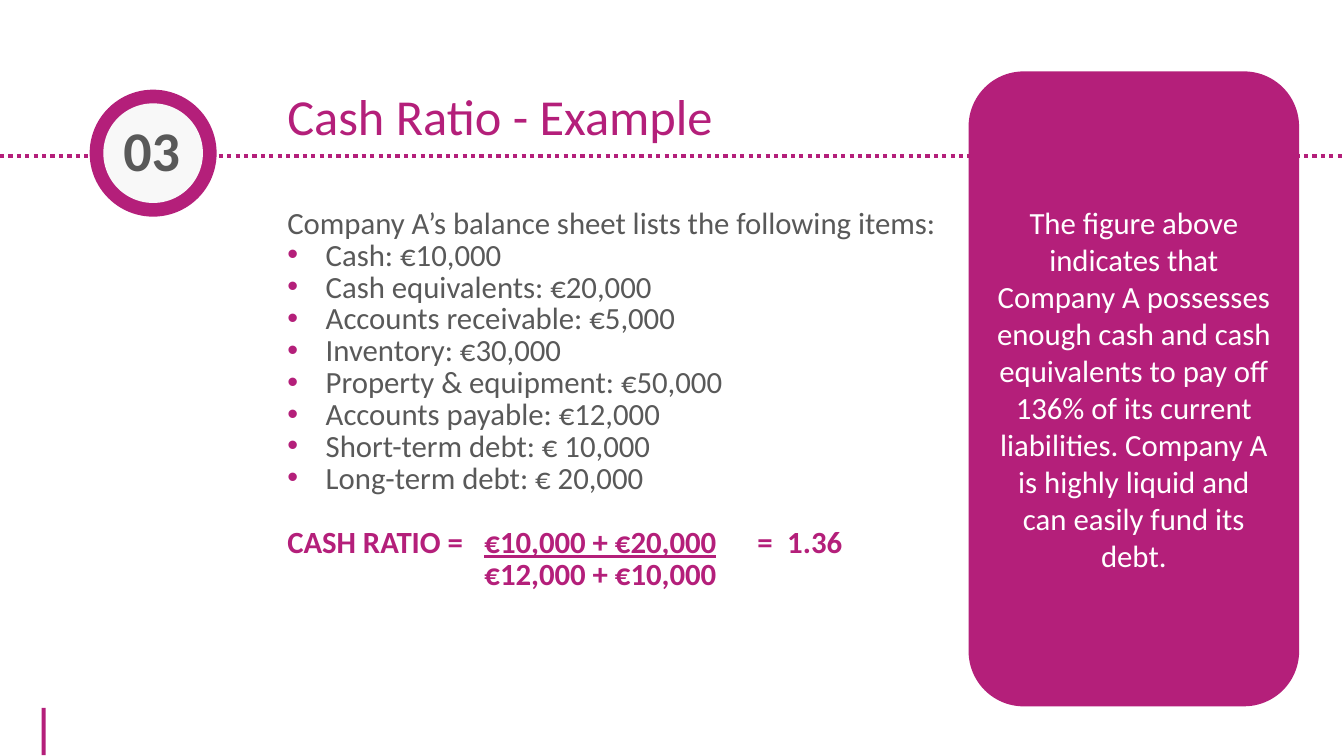
from dataclasses import dataclass

from lxml.etree import SubElement
from pptx import Presentation
from pptx.dml.color import RGBColor
from pptx.enum.dml import MSO_LINE
from pptx.enum.shapes import MSO_CONNECTOR, MSO_SHAPE
from pptx.enum.text import MSO_ANCHOR, PP_ALIGN
from pptx.oxml.ns import qn
from pptx.shapes.autoshape import Shape
from pptx.slide import Slide
from pptx.text.text import TextFrame, _Paragraph
from pptx.util import Cm, Pt

MAGENTA = RGBColor(0xB4, 0x1F, 0x7A)
GREY = RGBColor(0x59, 0x59, 0x59)
PALE = RGBColor(0xF8, 0xF8, 0xF8)
WHITE = RGBColor(0xFF, 0xFF, 0xFF)
FONT = "Calibri"
SLIDE_WIDTH, SLIDE_HEIGHT = 33.87, 19.05
BODY_SIZE = 22
BODY_LINE = Pt(22.8)
BULLET_INDENT = 0.97
FRACTION_LEFT, EQUALS_LEFT, RESULT_LEFT = 4.97, 11.85, 12.6
RULE_TOP = 3.94
BADGE_CENTRE = 3.86

BALANCE_SHEET = [
    "Cash: €10,000",
    "Cash equivalents: €20,000",
    "Accounts receivable: €5,000",
    "Inventory: €30,000",
    "Property & equipment: €50,000",
    "Accounts payable: €12,000",
    "Short-term debt: € 10,000",
    "Long-term debt: € 20,000",
]
CONCLUSION = (
    "The figure above indicates that Company A possesses enough cash and cash "
    "equivalents to pay off 136% of its current liabilities. Company A is highly "
    "liquid and can easily fund its debt."
)


@dataclass(frozen=True)
class Box:
    """Position and size in centimetres."""
    left: float
    top: float
    width: float
    height: float

    def lengths(self) -> tuple[Cm, Cm, Cm, Cm]:
        return Cm(self.left), Cm(self.top), Cm(self.width), Cm(self.height)


@dataclass(frozen=True)
class FilledShape:
    kind: MSO_SHAPE
    box: Box
    colour: RGBColor


def badge_circle(diameter: float, colour: RGBColor) -> FilledShape:
    start = BADGE_CENTRE - diameter / 2
    return FilledShape(MSO_SHAPE.OVAL, Box(start, start, diameter, diameter), colour)


CORNER_BAR = FilledShape(MSO_SHAPE.RECTANGLE, Box(1.05, 17.84, 0.1, 1.19), MAGENTA)
BADGE = [badge_circle(3.2, MAGENTA), badge_circle(2.51, PALE)]
PANEL = FilledShape(MSO_SHAPE.ROUNDED_RECTANGLE, Box(24.41, 1.8, 8.33, 16), MAGENTA)


def add_filled_shape(slide: Slide, item: FilledShape) -> Shape:
    shape = slide.shapes.add_shape(item.kind, *item.box.lengths())
    shape.shadow.inherit = False
    shape.fill.solid()
    shape.fill.fore_color.rgb = item.colour
    shape.line.fill.background()
    return shape


def add_text_frame(slide: Slide, box: Box) -> TextFrame:
    text_frame = slide.shapes.add_textbox(*box.lengths()).text_frame
    text_frame.word_wrap = True
    return text_frame


def add_run(paragraph: _Paragraph, text: str, size: float, colour: RGBColor,
            bold: bool = False, underline: bool = False) -> None:
    run = paragraph.add_run()
    run.text = text
    run.font.name = FONT
    run.font.size = Pt(size)
    run.font.color.rgb = colour
    run.font.bold = bold
    run.font.underline = underline


def add_body_paragraph(text_frame: TextFrame) -> _Paragraph:
    paragraph = text_frame.add_paragraph()
    paragraph.line_spacing = BODY_LINE
    return paragraph


def set_bullet(paragraph: _Paragraph) -> None:
    properties = paragraph._p.get_or_add_pPr()
    properties.set("marL", str(Cm(BULLET_INDENT)))
    properties.set("indent", str(-Cm(BULLET_INDENT)))
    colour = SubElement(properties, qn("a:buClr"))
    SubElement(colour, qn("a:srgbClr"), val=str(MAGENTA))
    SubElement(properties, qn("a:buFont"), typeface="Arial")
    SubElement(properties, qn("a:buChar"), char="•")


def set_tab_stops(paragraph: _Paragraph, *stops: float) -> None:
    tab_list = SubElement(paragraph._p.get_or_add_pPr(), qn("a:tabLst"))
    for stop in stops:
        SubElement(tab_list, qn("a:tab"), pos=str(Cm(stop)), algn="l")


def add_title(slide: Slide) -> None:
    text_frame = add_text_frame(slide, Box(6.99, 2.24, 25.25, 1.63))
    text_frame.vertical_anchor = MSO_ANCHOR.MIDDLE
    paragraph = text_frame.paragraphs[0]
    paragraph.line_spacing = 0.8
    add_run(paragraph, "Cash Ratio - Example", 36, MAGENTA)


def add_body(slide: Slide) -> None:
    text_frame = add_text_frame(slide, Box(6.99, 5.13, 25.25, 13.9))
    introduction = text_frame.paragraphs[0]
    introduction.line_spacing = BODY_LINE
    add_run(introduction, "Company A’s balance sheet lists the following items:",
            BODY_SIZE, GREY)
    for item in BALANCE_SHEET:
        paragraph = add_body_paragraph(text_frame)
        set_bullet(paragraph)
        add_run(paragraph, item, BODY_SIZE, GREY)

    numerator = add_body_paragraph(text_frame)
    numerator.space_before = BODY_LINE
    set_tab_stops(numerator, FRACTION_LEFT, EQUALS_LEFT, RESULT_LEFT)
    add_run(numerator, "CASH RATIO =\t", BODY_SIZE, MAGENTA, bold=True)
    add_run(numerator, "€10,000 + €20,000", BODY_SIZE, MAGENTA, bold=True, underline=True)
    add_run(numerator, "\t=\t1.36", BODY_SIZE, MAGENTA, bold=True)

    denominator = add_body_paragraph(text_frame)
    denominator._p.get_or_add_pPr().set("marL", str(Cm(FRACTION_LEFT)))
    add_run(denominator, "€12,000 + €10,000", BODY_SIZE, MAGENTA, bold=True)


def add_dotted_rule(slide: Slide) -> None:
    rule = slide.shapes.add_connector(
        MSO_CONNECTOR.STRAIGHT, Cm(0), Cm(RULE_TOP), Cm(SLIDE_WIDTH), Cm(RULE_TOP))
    rule.line.color.rgb = MAGENTA
    rule.line.width = Pt(3)
    rule.line.dash_style = MSO_LINE.ROUND_DOT
    SubElement(rule._element.spPr, qn("a:effectLst"))


def add_badge(slide: Slide) -> None:
    for circle in BADGE:
        add_filled_shape(slide, circle)
    text_frame = add_text_frame(slide, Box(2.54, 2.79, 2.57, 1.96))
    paragraph = text_frame.paragraphs[0]
    paragraph.alignment = PP_ALIGN.CENTER
    add_run(paragraph, "03", 40, GREY, bold=True)


def add_conclusion_panel(slide: Slide) -> None:
    text_frame = add_filled_shape(slide, PANEL).text_frame
    text_frame.word_wrap = True
    text_frame.vertical_anchor = MSO_ANCHOR.MIDDLE
    paragraph = text_frame.paragraphs[0]
    paragraph.alignment = PP_ALIGN.CENTER
    add_run(paragraph, CONCLUSION, BODY_SIZE, WHITE)


def main() -> None:
    presentation = Presentation()
    presentation.slide_width = Cm(SLIDE_WIDTH)
    presentation.slide_height = Cm(SLIDE_HEIGHT)
    slide = presentation.slides.add_slide(presentation.slide_layouts[6])
    add_filled_shape(slide, CORNER_BAR)
    add_title(slide)
    add_body(slide)
    add_dotted_rule(slide)
    add_badge(slide)
    add_conclusion_panel(slide)
    presentation.save("out.pptx")


if __name__ == "__main__":
    main()
